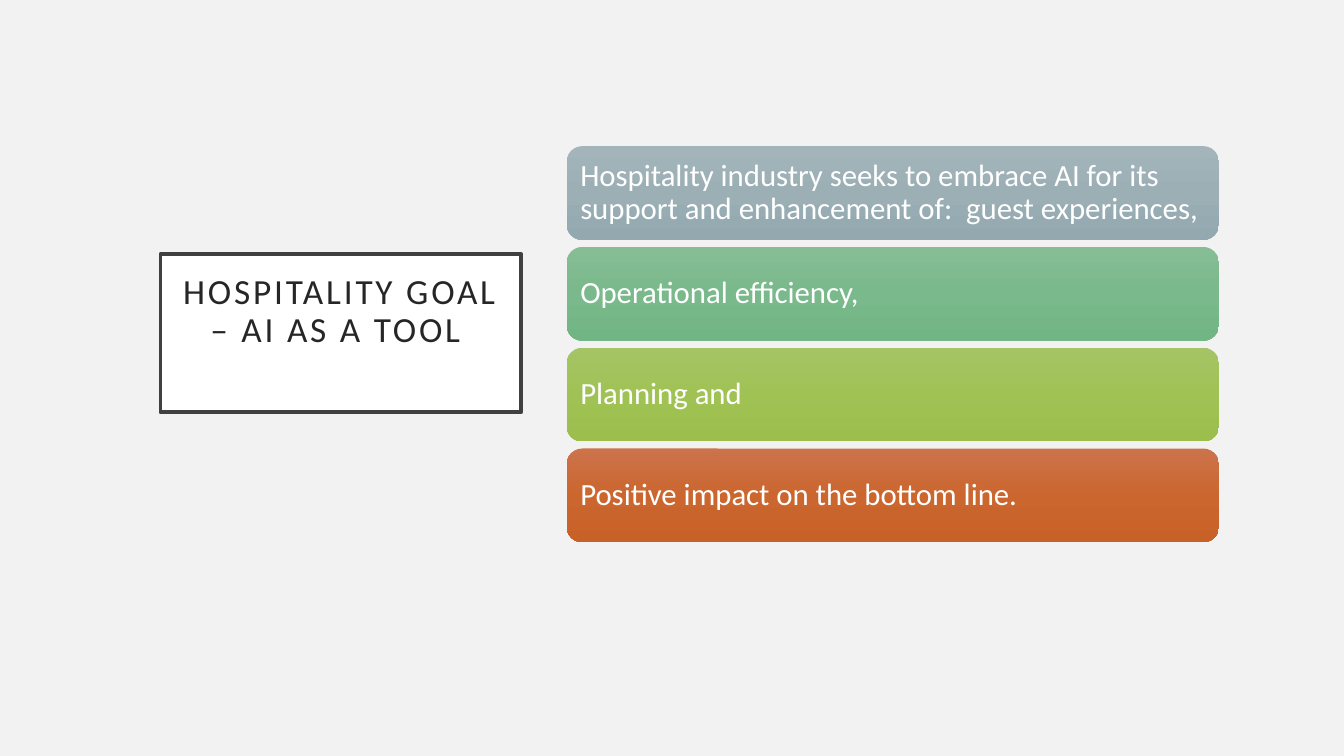
from copy import deepcopy

from pptx import Presentation
from pptx.dml.color import RGBColor
from pptx.enum import shapes, text
from pptx.oxml.ns import qn
from pptx.util import Inches, Pt

TITLE = "HOSPITALITY GOAL – AI AS A TOOL "
GOALS = [
    ("Hospitality industry seeks to embrace AI for its support and "
     "enhancement of:  guest experiences,", ("A3B5BB", "9BAFB5", "93A9AF")),
    ("Operational efficiency,", ("86BD95", "7AB98B", "72B584")),
    ("Planning and", ("A5C466", "A0C255", "9BBE4D")),
    ("Positive impact on the bottom line.", ("CC734B", "CB662F", "C86128")),
]
THEME = {
    "font": "Calibri", "back": "F2F2F2", "panel": "FFFFFF", "edge": "404040",
    "title": "262626", "light": "FFFFFF", "title_size": 25.2, "goal_size": 22,
}
LEFT, TOP, WIDTH, HEIGHT, STEP = 5.62, 1.45, 6.47, 0.93, 1.0


def color(name):
    return RGBColor.from_string(THEME.get(name, name))


def add_box(slide, kind, place, words, size, ink, inset, anchor, align):
    box = slide.shapes.add_shape(kind, *map(Inches, place))
    box.shadow.inherit = False
    frame = box.text_frame
    frame.word_wrap = True
    frame.vertical_anchor = anchor
    frame.margin_left = frame.margin_right = Inches(inset)
    frame.margin_top = frame.margin_bottom = Inches(inset)
    frame.text = words
    line = frame.paragraphs[0]
    line.alignment = align
    line.line_spacing = 0.9
    font = line.runs[0].font
    font.name, font.size = THEME["font"], Pt(THEME[size])
    font.color.rgb = color(ink)
    return box


def shade(box, tones):
    """Fill from top to bottom with evenly spaced tones."""
    box.fill.gradient()
    box.fill.gradient_angle = 270
    stops = box._element.spPr.find(".//" + qn("a:gsLst"))
    while len(stops) < len(tones):
        stops.append(deepcopy(stops[-1]))
    for i, (stop, tone) in enumerate(zip(box.fill.gradient_stops, tones)):
        stop.position = i / (len(tones) - 1)
        stop.color.rgb = color(tone)


def main():
    deck = Presentation()
    deck.slide_width, deck.slide_height = Inches(13.33), Inches(7.5)
    slide = deck.slides.add_slide(deck.slide_layouts[6])
    slide.background.fill.solid()
    slide.background.fill.fore_color.rgb = color("back")

    kinds = shapes.MSO_SHAPE
    title = add_box(slide, kinds.RECTANGLE, (1.59, 2.52, 3.58, 1.57), TITLE,
                    "title_size", "title", 0.2, text.MSO_ANCHOR.TOP,
                    text.PP_ALIGN.CENTER)
    title.fill.solid()
    title.fill.fore_color.rgb = color("panel")
    title.line.color.rgb = color("edge")
    title.line.width = Pt(2.5)
    run = title.text_frame.paragraphs[0].runs[0]
    run.font._element.set("spc", "200")

    for row, (words, tones) in enumerate(GOALS):
        goal = add_box(slide, kinds.ROUNDED_RECTANGLE,
                       (LEFT, TOP + row * STEP, WIDTH, HEIGHT), words,
                       "goal_size", "light", 0.09, text.MSO_ANCHOR.MIDDLE,
                       text.PP_ALIGN.LEFT)
        shade(goal, tones)
        goal.line.fill.background()

    deck.save("out.pptx")


if __name__ == "__main__":
    main()
